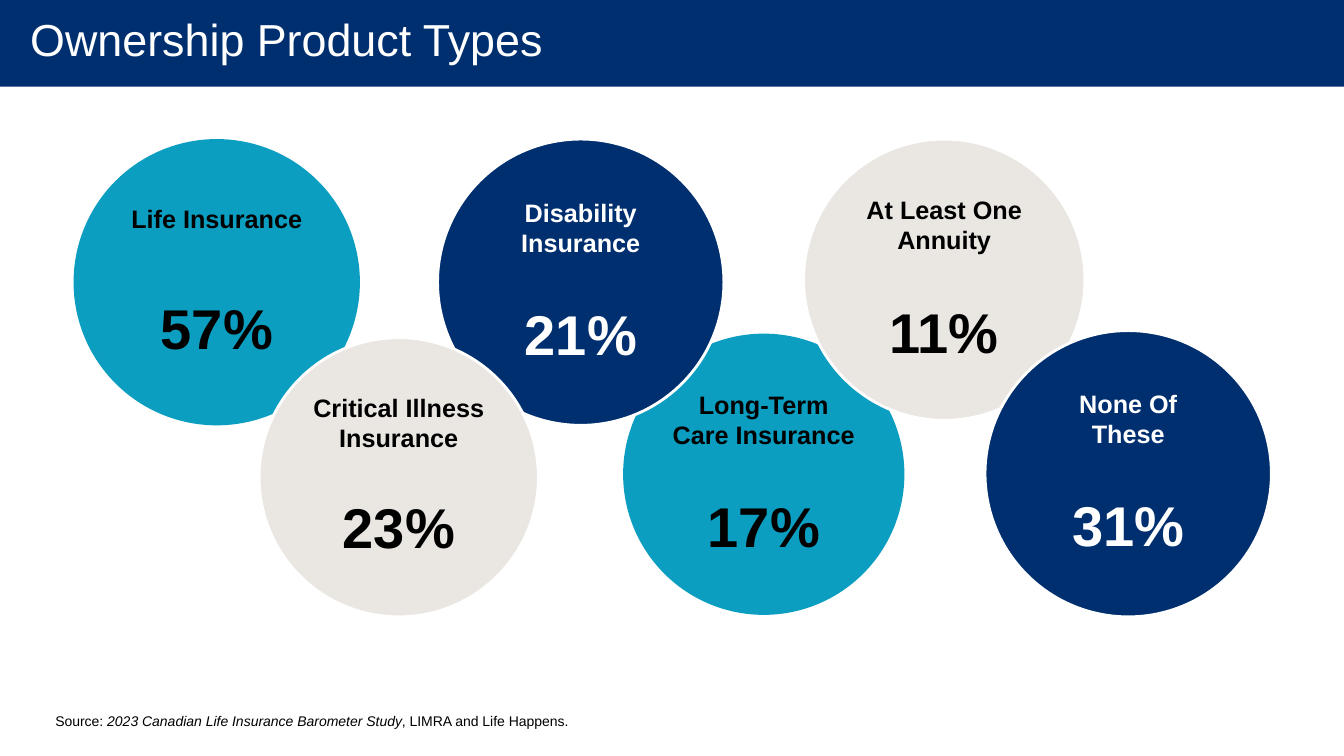
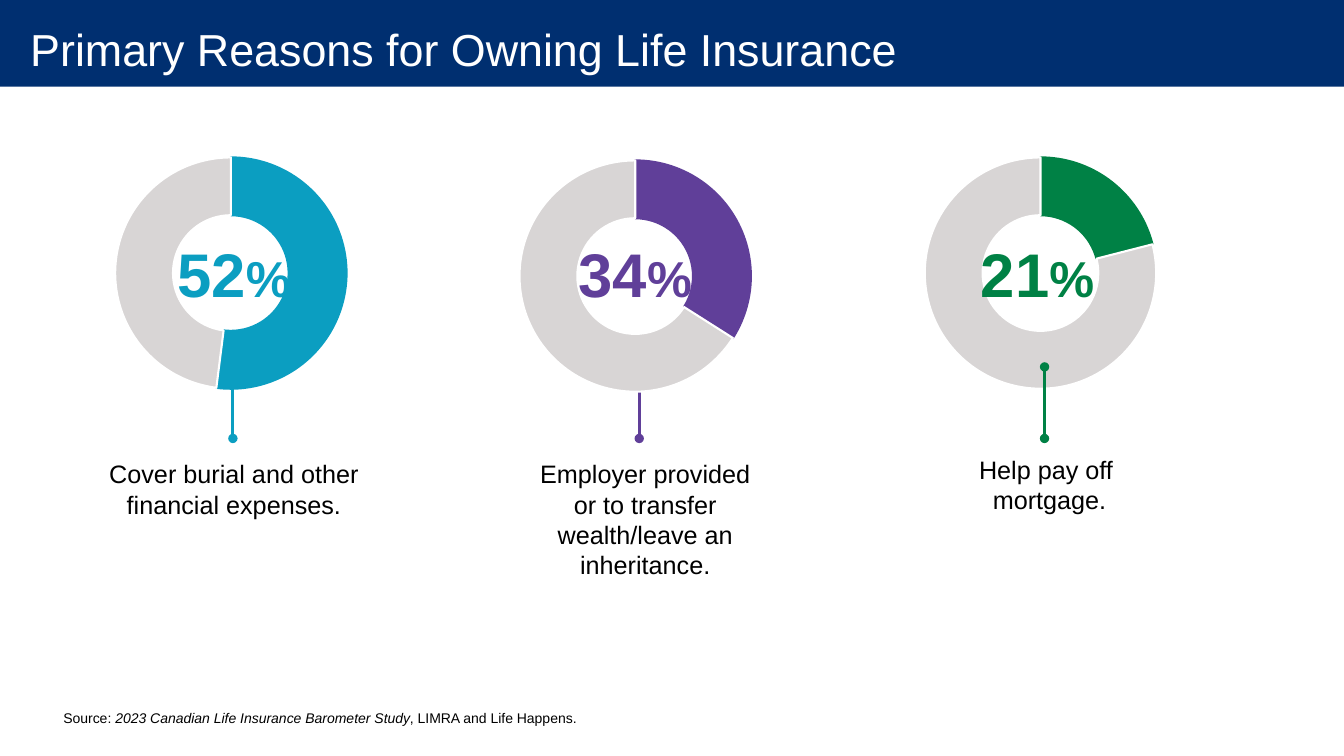
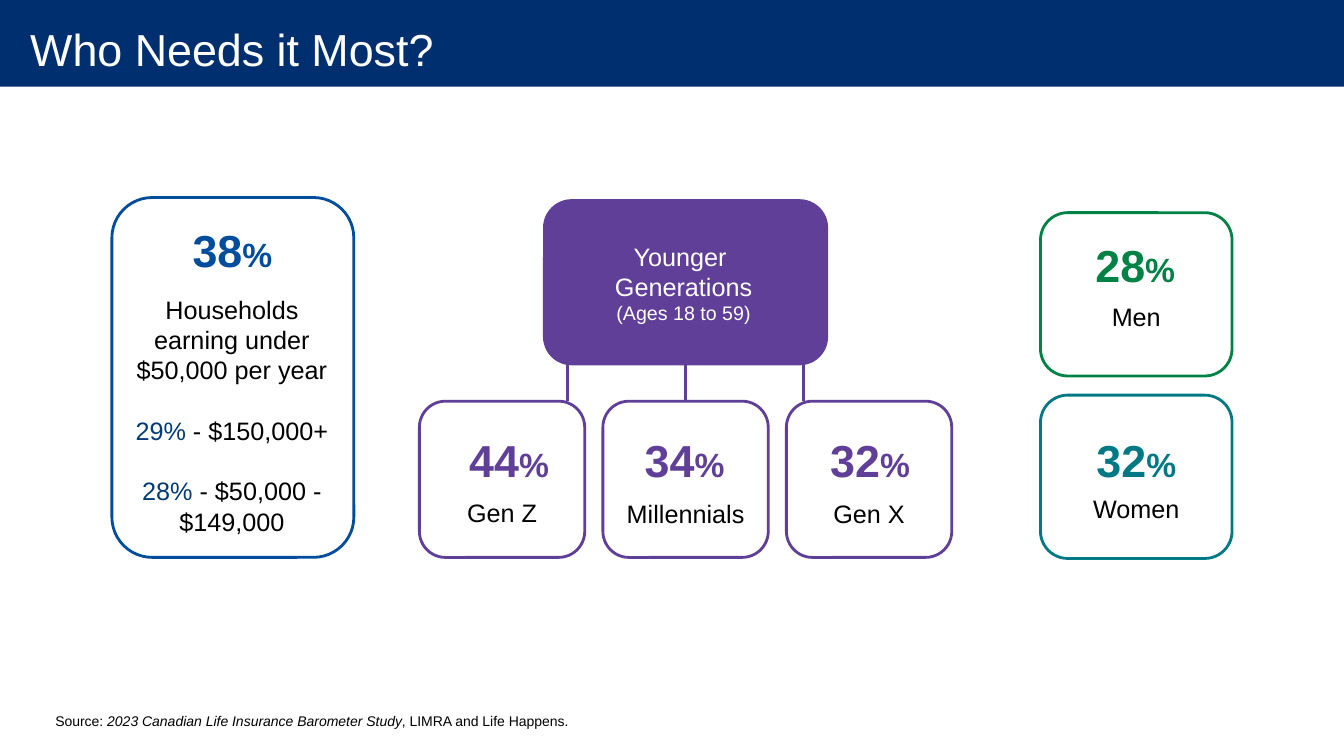
import pptx
import pptx.util
import pptx.chart.data
import pptx.dml.color
import pptx.enum.chart
import pptx.enum.shapes
import pptx.enum.text
import pptx.oxml.ns
import pptx.oxml.xmlchemy

Inches = pptx.util.Inches
Pt = pptx.util.Pt
RGBColor = pptx.dml.color.RGBColor
SHAPE = pptx.enum.shapes.MSO_SHAPE
ALIGN = pptx.enum.text.PP_ALIGN
new_element = pptx.oxml.xmlchemy.OxmlElement
qn = pptx.oxml.ns.qn

# Shared style
FONT = "Arial"
NAVY = RGBColor(0x00, 0x2F, 0x70)
AQUA = RGBColor(0x0B, 0x9E, 0xC1)
SAND = RGBColor(0xEA, 0xE6, 0xE2)
GRAY = RGBColor(0xD8, 0xD5, 0xD5)
PURPLE = RGBColor(0x60, 0x3F, 0x99)
GREEN = RGBColor(0x00, 0x81, 0x45)
BLUE = RGBColor(0x00, 0x4C, 0x9D)
DEEP_BLUE = RGBColor(0x00, 0x3B, 0x73)
TEAL = RGBColor(0x00, 0x79, 0x85)
BLACK = RGBColor(0, 0, 0)
WHITE = RGBColor(255, 255, 255)

SOURCE = [("Source: ", {}),
          ("2023 Canadian Life Insurance Barometer Study", {"italic": True}),
          (", LIMRA and Life Happens.", {})]

# Slide 1: left, top, diameter, fill, outline, text colour,
# label, label width, label top, share, share top
PRODUCTS = [
    (0.73, 1.38, 2.84, AQUA, None, BLACK, "Life Insurance", 1.99, 1.97, "57%", 2.86),
    (6.18, 3.31, 2.79, AQUA, None, BLACK, "Long-Term Care Insurance", 2.07, 3.81, "17%", 4.83),
    (4.34, 1.38, 2.84, NAVY, WHITE, WHITE, "Disability Insurance", 1.99, 1.91, "21%", 2.92),
    (2.57, 3.35, 2.77, SAND, WHITE, BLACK, "Critical Illness Insurance", 1.94, 3.84, "23%", 4.84),
    (7.97, 1.38, 2.79, SAND, WHITE, BLACK, "At Least One Annuity", 1.9, 1.88, "11%", 2.9),
    (9.77, 3.28, 2.84, NAVY, WHITE, WHITE, "None Of These", 1.58, 3.8, "31%", 4.82),
]

# Slide 2: share, colour, chart left and top, share left, pin x,
# pin in front of the ring, caption lines, caption left, top and width
REASONS = [
    (52, AQUA, 0.33, 1.42, 1.26, 2.31, True,
     ["Cover burial and other financial expenses."], 0.89, 4.5, 2.86),
    (34, PURPLE, 4.34, 1.45, 5.24, 6.34, False,
     ["Employer provided or to transfer wealth/leave an inheritance."], 5.15, 4.5, 2.5),
    (21, GREEN, 8.36, 1.42, 9.23, 10.36, True,
     ["Help pay off ", "mortgage."], 9.08, 4.46, 2.66),
]

# Slide 3: card box, colour, share, share left and top, label, label top
GEN_LEFT, GEN_STEP, GEN_TOP, GEN_WIDTH, GEN_HEIGHT = 4.16, 1.82, 3.98, 1.64, 1.55
GENERATIONS = [("44", 4.23, "Gen Z", 4.88),
               ("34", 5.97, "Millennials", 4.89),
               ("32", 7.81, "Gen X", 4.89)]
GROUPS = [((10.32, 2.11, 1.9, 1.62), GREEN, "28", 10.31, 2.31, "Men", 2.94),
          ((10.32, 3.92, 1.9, 1.62), TEAL, "32", 10.32, 4.24, "Women", 4.84)]
for index, (share, share_left, label, label_top) in enumerate(GENERATIONS):
    card_box = (GEN_LEFT + index * GEN_STEP, GEN_TOP, GEN_WIDTH, GEN_HEIGHT)
    GROUPS.append((card_box, PURPLE, share, share_left, 4.24, label, label_top))
HOUSEHOLDS = [
    [("Households earning under $50,000 per year", {})],
    [("29% ", {"color": DEEP_BLUE}), ("- $150,000+", {})],
    [("28% ", {"color": DEEP_BLUE}), ("- $50,000 - $149,000", {})],
]


def add_text(page, box, paras, size, color=BLACK, bold=False,
             align=ALIGN.CENTER, gap=0):
    """Each paragraph is a string or a list of (text, font changes)."""
    frame = page.shapes.add_textbox(*map(Inches, box)).text_frame
    frame.word_wrap = True
    for number, spans in enumerate(paras):
        para = frame.paragraphs[0] if number == 0 else frame.add_paragraph()
        para.alignment = align
        if number and gap:
            para.space_before = Pt(gap)
        para.font.name, para.font.size, para.font.bold = FONT, Pt(size), bold
        para.font.color.rgb = color
        for text, changes in [(spans, {})] if isinstance(spans, str) else spans:
            span = para.add_run()
            span.text = text
            if "color" in changes:
                span.font.color.rgb = changes["color"]
            if "size" in changes:
                span.font.size = Pt(changes["size"])
            if "italic" in changes:
                span.font.italic = changes["italic"]


def add_share(page, box, share, color, size, sign_size):
    spans = [(str(share), {}), ("%", {"size": sign_size})]
    add_text(page, box, [spans], size, color, bold=True)


def add_shape(page, kind, box, fill=None, line=None):
    shape = page.shapes.add_shape(kind, *map(Inches, box))
    shape.shadow.inherit = False
    if fill is None:
        shape.fill.background()
    else:
        shape.fill.solid()
        shape.fill.fore_color.rgb = fill
    if line is None:
        shape.line.fill.background()
    else:
        shape.line.color.rgb = line
        shape.line.width = Pt(2)
    return shape


def add_line(page, x, top, bottom, color, dots=False):
    line = page.shapes.add_connector(
        pptx.enum.shapes.MSO_CONNECTOR.STRAIGHT,
        Inches(x), Inches(top), Inches(x), Inches(bottom))
    line.line.color.rgb = color
    line.line.width = Pt(2.25)
    if dots:
        outline = line.element.spPr.find(qn("a:ln"))
        for tag in ("a:headEnd", "a:tailEnd"):
            end = new_element(tag)
            end.set("type", "oval")
            outline.append(end)
    line.element.spPr.append(new_element("a:effectLst"))
    return line


def add_ring(page, share, color, left, top):
    width, height, part = 3.92, 2.58, 0.89
    data = pptx.chart.data.CategoryChartData()
    data.categories = ["1", "2"]
    data.add_series("Series 1", (share, 100 - share))
    chart = page.shapes.add_chart(
        pptx.enum.chart.XL_CHART_TYPE.DOUGHNUT,
        *map(Inches, (left, top, width, height)), data).chart
    chart.has_legend = chart.has_title = False
    chart.font.name, chart.font.size = FONT, Pt(10)
    chart.font.color.rgb = BLACK
    plot = chart.plots[0]
    plot.vary_by_categories = False
    for number, (fill, edge) in enumerate([(color, color), (GRAY, WHITE)]):
        style = plot.series[0].points[number].format
        style.fill.solid()
        style.fill.fore_color.rgb = fill
        style.line.color.rgb = edge
        style.line.width = Pt(1.5)

    # Hole size and a centred square plot area
    area = chart.element.find(".//" + qn("c:plotArea"))
    area.find(".//" + qn("c:holeSize")).set("val", "75")
    for old in area.findall(qn("c:layout")):
        area.remove(old)
    layout = new_element("c:layout")
    manual = new_element("c:manualLayout")
    layout.append(manual)
    wide = part * height / width
    for tag, value in [("layoutTarget", "inner"), ("xMode", "edge"), ("yMode", "edge"),
                       ("x", (1 - wide) / 2), ("y", (1 - part) / 2),
                       ("w", wide), ("h", part)]:
        setting = new_element("c:" + tag)
        setting.set("val", str(value))
        manual.append(setting)
    area.insert(0, layout)


def add_page(deck, heading, title_top=0, source_at=(0.45, 7.02)):
    page = deck.slides.add_slide(deck.slide_layouts[5])
    band = add_shape(page, SHAPE.RECTANGLE, (0, 0, 13.33, 0.86), NAVY)
    page.shapes.element.insert(2, band.element)
    title = page.shapes.title
    title.left, title.top, title.width, title.height = map(
        Inches, (0, title_top, 13.33, 0.97))
    frame = title.text_frame
    frame.text = heading
    frame.auto_size = pptx.enum.text.MSO_AUTO_SIZE.NONE
    frame.word_wrap = False
    frame.vertical_anchor = pptx.enum.text.MSO_ANCHOR.MIDDLE
    frame.margin_left, frame.margin_right = Inches(0.3), Inches(0.2)
    frame.margin_top = frame.margin_bottom = 0
    para = frame.paragraphs[0]
    para.alignment = ALIGN.LEFT
    para.font.name, para.font.size = FONT, Pt(32)
    para.font.color.rgb = WHITE
    add_text(page, (*source_at, 7.44, 0.27), [SOURCE], 10, align=ALIGN.LEFT)
    return page


def build_products(deck):
    page = add_page(deck, "Ownership Product Types", title_top=-0.1)
    for (left, top, size, fill, line, color, label, label_width, label_top,
         share, share_top) in PRODUCTS:
        add_shape(page, SHAPE.OVAL, (left, top, size, size), fill, line)
        middle = left + size / 2
        add_text(page, (middle - label_width / 2, label_top, label_width, 0.71),
                 [label], 18, color, bold=True)
        add_text(page, (middle - 0.7, share_top, 1.4, 0.77),
                 [share], 40, color, bold=True)


def build_reasons(deck):
    page = add_page(deck, "Primary Reasons for Owning Life Insurance",
                    source_at=(0.53, 6.99))
    for (share, color, left, top, share_left, pin_x, pin_in_front,
         caption, caption_left, caption_top, caption_width) in REASONS:
        if pin_in_front:
            add_ring(page, share, color, left, top)
        add_line(page, pin_x, 3.64, 4.35, color, dots=True)
        if not pin_in_front:
            add_ring(page, share, color, left, top)
        add_share(page, (share_left, 2.29, 2.12, 0.84), share, color, 44, 36)
        add_text(page, (caption_left, caption_top, caption_width, 0.71), caption, 18)


def build_needs(deck):
    page = add_page(deck, "Who Needs it Most?")

    # Households
    add_shape(page, SHAPE.ROUNDED_RECTANGLE, (1.11, 1.96, 2.4, 3.57), line=BLUE)
    add_share(page, (1.76, 2.16, 1.09, 0.64), 38, BLUE, 32, 24)
    add_text(page, (1.23, 2.87, 2.14, 2.52), HOUSEHOLDS, 18, gap=21.6)

    # Generations, men and women
    younger = add_shape(page, SHAPE.ROUNDED_RECTANGLE, (5.4, 1.99, 2.8, 1.62),
                        PURPLE, PURPLE)
    add_text(page, (5.47, 2.34, 2.62, 0.94),
             ["Younger ", "Generations", [("(Ages 18 to 59)", {"size": 14})]],
             18, WHITE)
    cards = {}
    for box, color, share, share_left, share_top, label, label_top in GROUPS:
        left, top, width, height = box
        cards[label] = add_shape(page, SHAPE.ROUNDED_RECTANGLE, box, line=color)
        add_share(page, (share_left, share_top, width, 0.64), share, color, 32, 24)
        add_text(page, (left, label_top, width, 0.4), [label], 18)

    # Links from the parent card
    middle = 6.8
    for shift in (-1.17, 0, 1.17):
        link = add_line(page, middle + shift, 3.61, GEN_TOP, PURPLE)
        if shift == 0:
            link.begin_connect(younger, 2)
            link.end_connect(cards["Millennials"], 0)


def main():
    deck = pptx.Presentation()
    deck.slide_width, deck.slide_height = Inches(13.33), Inches(7.5)
    build_products(deck)
    build_reasons(deck)
    build_needs(deck)
    deck.save("out.pptx")


if __name__ == "__main__":
    main()
